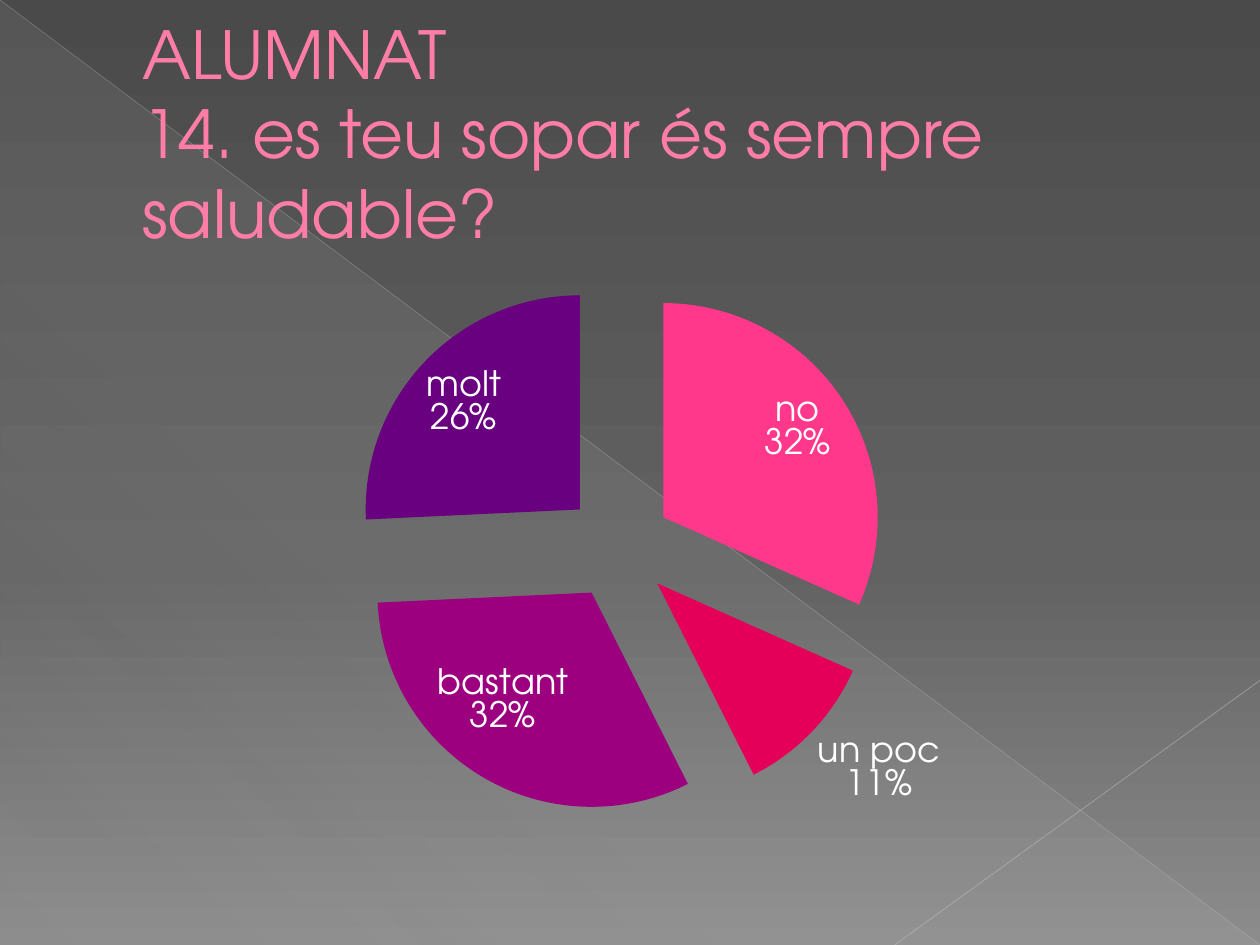
from lxml import etree
from pptx import Presentation
from pptx import util as u
from pptx.chart import data as chart_data
from pptx.dml import color
from pptx.enum import chart as charts, shapes, text
from pptx.oxml import parse_xml
from pptx.oxml import ns

WIDTH, HEIGHT = 10, 7.5
FONT = "TeX Gyre Adventor"
SLICES = [("no", 32, "FF388C"), ("un poc", 11, "E40059"),
          ("bastant", 32, "9C007F"), ("molt", 26, "68007F")]


def rgb(value):
    """Turn a hex string into a colour."""
    return color.RGBColor.from_string(value)


def across(share):
    """Give a share of the slide width."""
    return u.Inches(WIDTH * share)


def down(share):
    """Give a share of the slide height."""
    return u.Inches(HEIGHT * share)


def set_values(target, values):
    """Set attributes from a dict of format values."""
    for name, value in values.items():
        setattr(target, name, value)


def add_alpha(parent, percent):
    """Make the colours under an element partly transparent."""
    for tone in parent.iter(ns.qn("a:srgbClr")):
        etree.SubElement(tone, ns.qn("a:alpha")).set("val", str(percent * 1000))


def set_gradient(fill, parent, stops, angle):
    """Fill with a linear gradient of (position, colour, opacity) stops."""
    fill.gradient()
    fill.gradient_angle = 360 - angle
    stop_list = next(parent.iter(ns.qn("a:gsLst")))
    for old in list(stop_list):
        stop_list.remove(old)
    for position, tone, opacity in stops:
        stop = etree.SubElement(stop_list, ns.qn("a:gs"), pos=str(position * 1000))
        etree.SubElement(stop, ns.qn("a:srgbClr"), val=tone)
        if opacity < 100:
            add_alpha(stop, opacity)


def add_triangle(page):
    """Add the pale corner triangle."""
    triangle = page.shapes.add_shape(
        shapes.MSO_SHAPE.RIGHT_TRIANGLE, 0, 0, across(1), down(1))
    triangle.shadow.inherit = False
    triangle.line.fill.background()
    stops = [(0, "D2D2D2", 10), (70, "D2D2D2", 8), (100, "D2D2D2", 1)]
    set_gradient(triangle.fill, triangle._element.spPr, stops, 133)


def add_line(page, start, end, tone, width, opacity):
    """Add a thin translucent line between two points in slide shares."""
    line = page.shapes.add_connector(
        shapes.MSO_CONNECTOR.STRAIGHT, across(start[0]), down(start[1]),
        across(end[0]), down(end[1]))
    line.line.width = u.Pt(width)
    line.line.color.rgb = rgb(tone)
    properties = line._element.spPr
    add_alpha(properties, opacity)
    etree.SubElement(properties, ns.qn("a:effectLst"))


def add_title(page, wording):
    """Add the indented slide title."""
    box = page.shapes.add_textbox(across(0.05), down(0.04), across(0.9), down(0.2))
    set_values(box.text_frame, {
        "word_wrap": True, "vertical_anchor": text.MSO_ANCHOR.MIDDLE,
        "margin_left": u.Inches(0.63)})
    para = box.text_frame.paragraphs[0]
    para.text = wording
    for span in para.runs:
        set_values(span.font, {"name": FONT, "size": u.Pt(37.8)})
        span.font.color.rgb = rgb("FF7DA7")


def set_plot_area(chart, layout):
    """Place the inner plot area by shares of the chart."""
    plot_area = chart._chartSpace.chart.plotArea
    for old in plot_area.findall(ns.qn("c:layout")):
        plot_area.remove(old)
    parts = "".join(f'<c:{name} val="{value}"/>' for name, value in layout.items())
    plot_area.insert(0, parse_xml(
        f'<c:layout {ns.nsdecls("c")}><c:manualLayout>{parts}'
        "</c:manualLayout></c:layout>"))


def set_labels(plot):
    """Show category and percentage on each slice."""
    plot.has_data_labels = True
    labels = plot.data_labels
    set_values(labels, {
        "show_category_name": True, "show_percentage": True, "show_value": False,
        "number_format": "0%", "number_format_is_linked": False,
        "position": charts.XL_LABEL_POSITION.BEST_FIT})
    set_values(labels.font, {"name": FONT, "size": u.Pt(20)})
    labels.font.color.rgb = rgb("FFFFFF")


def add_pie(page):
    """Add the exploded pie of answers."""
    answers = chart_data.CategoryChartData()
    answers.categories = [name for name, _, _ in SLICES]
    answers.add_series("Series 1", [value for _, value, _ in SLICES])
    chart = page.shapes.add_chart(
        charts.XL_CHART_TYPE.PIE, across(0.05), down(0.275), across(0.9),
        down(2 / 3), answers).chart
    set_values(chart, {"has_legend": False, "has_title": False})
    set_values(chart.font, {"name": FONT, "size": u.Pt(10)})
    chart.font.color.rgb = rgb("FFFFFF")
    plot = chart.plots[0]
    plot.vary_by_categories = True
    series = plot.series[0]
    for index, (_, _, tone) in enumerate(SLICES):
        fill = series.points[index].format.fill
        fill.solid()
        fill.fore_color.rgb = rgb(tone)
    series._element.find(ns.qn("c:dPt")).addprevious(
        parse_xml(f'<c:explosion {ns.nsdecls("c")} val="25"/>'))
    set_labels(plot)
    set_plot_area(chart, {
        "layoutTarget": "inner", "xMode": "edge", "yMode": "edge",
        "x": 0.25, "y": 0.03, "w": 0.48, "h": 0.85})


def main():
    """Build and save the slide."""
    deck = Presentation()
    set_values(deck, {"slide_width": across(1), "slide_height": down(1)})
    page = deck.slides.add_slide(deck.slide_layouts[6])
    stops = [(0, "4A4A4A", 100), (60, "626262", 100), (100, "8C8C8C", 100)]
    set_gradient(page.background.fill, page._element, stops, 90)
    add_triangle(page)
    add_line(page, (0, 0), (1, 1), "BFBFBF", 0.39, 35)
    add_line(page, (1, 0.72), (0.71, 1), "C6C6C6", 0.47, 45)
    add_title(page, "ALUMNAT\v14. es teu sopar és sempre saludable?")
    add_pie(page)
    deck.save("out.pptx")


if __name__ == "__main__":
    main()
